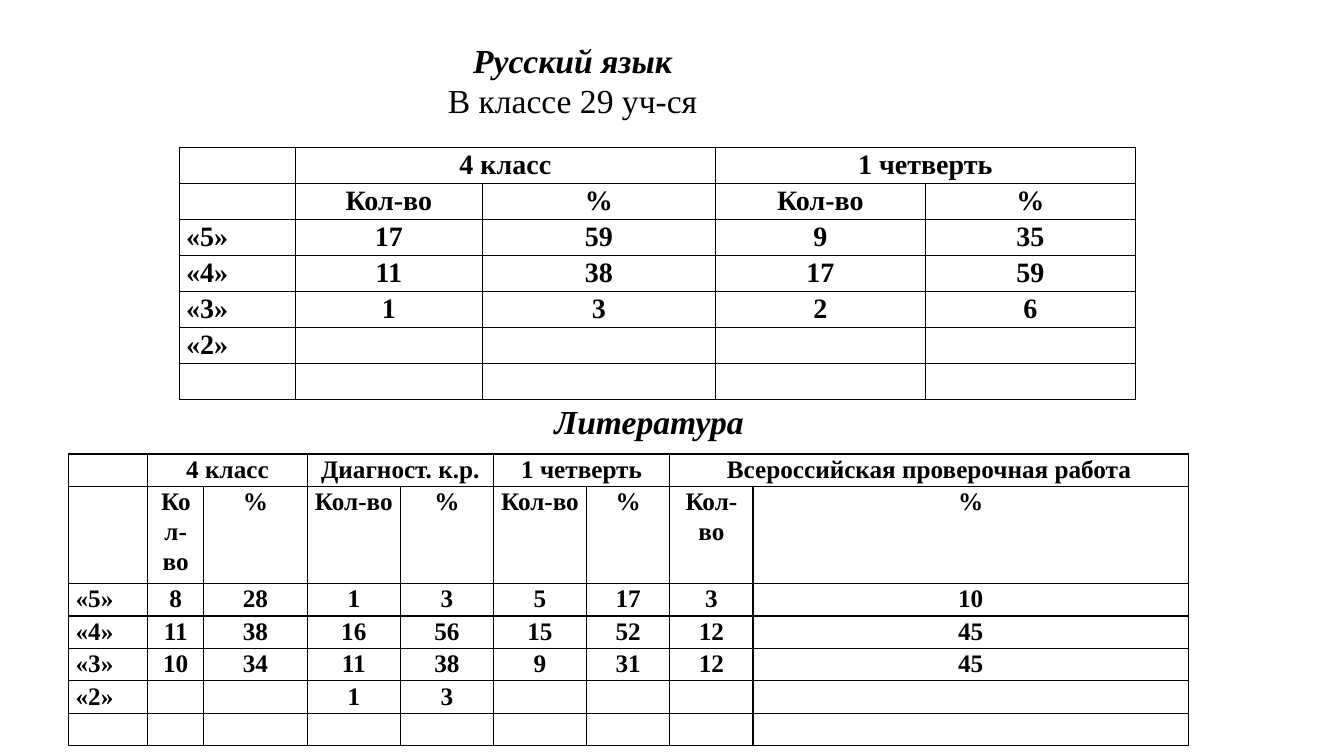
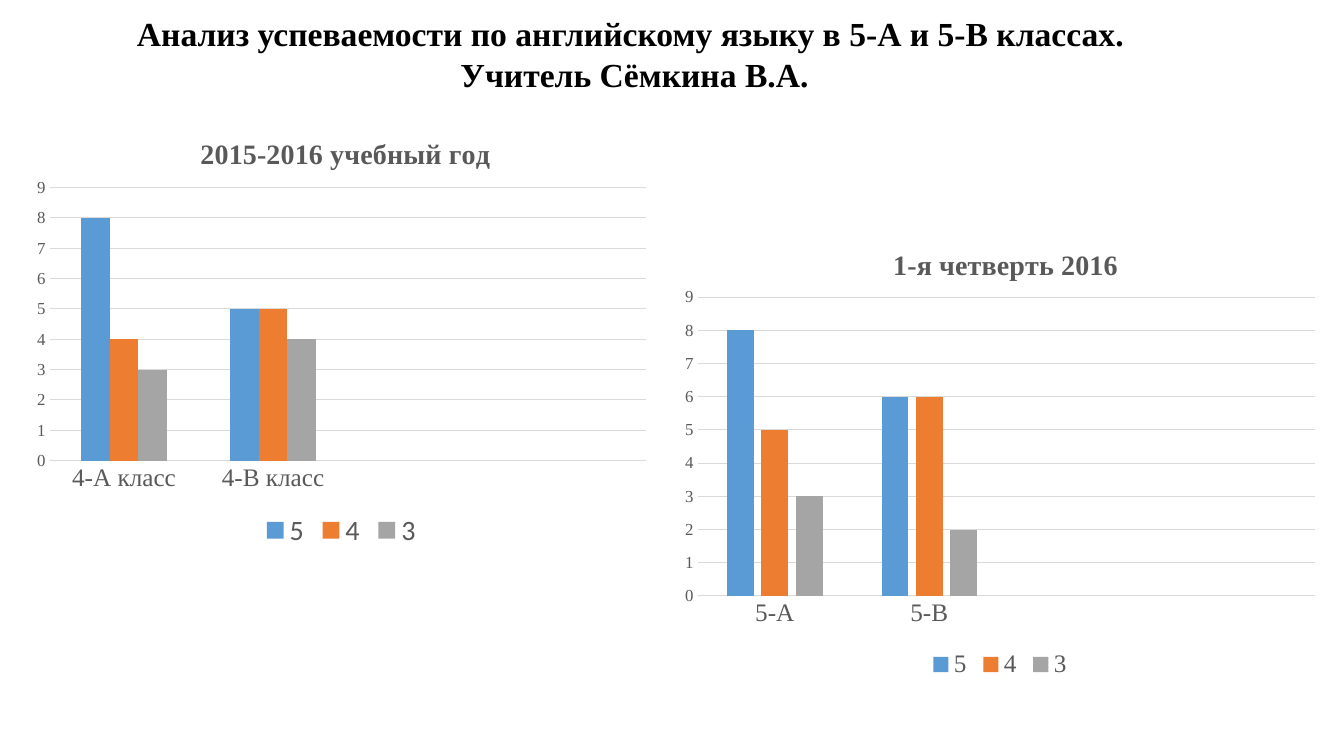
from lxml.etree import SubElement as Sub
from pptx import Presentation as Deck
from pptx.chart.data import CategoryChartData as Data
from pptx.dml.color import RGBColor as RGB
from pptx.enum.chart import XL_CHART_TYPE as Kind, XL_LEGEND_POSITION as Spot, XL_TICK_MARK as Tick
from pptx.enum.text import PP_ALIGN as Align
from pptx.oxml.ns import qn
from pptx.util import Pt

HUES = {"ink": "000000", "gray": "595959", "rule": "D9D9D9",
        "5": "5B9BD5", "4": "ED7D31", "3": "A5A5A5"}
SERIF, SANS = "Times New Roman", "Calibri"


class Page:
    def __init__(self, deck):
        self.deck = deck
        self.slide = None

    def new(self):
        self.slide = self.deck.slides.add_slide(self.deck.slide_layouts[6])

    def style(self, font, size, hue="ink", **more):
        looks = {"name": SERIF, "size": Pt(size), **more}
        for key, value in looks.items():
            setattr(font, key, value)
        font.color.rgb = RGB.from_string(HUES[hue])

    def rule(self, line):
        line.color.rgb = RGB.from_string(HUES["rule"])
        line.width = Pt(0.75)

    def text(self, box, lines, wrap=False):
        frame = self.slide.shapes.add_textbox(*map(Pt, box)).text_frame
        frame.word_wrap = wrap
        for i, (words, looks) in enumerate(lines):
            para = frame.add_paragraph() if i else frame.paragraphs[0]
            para.alignment = Align.CENTER
            run = para.add_run()
            run.text = words
            self.style(run.font, 24, **looks)

    def edge(self, cell):
        props = cell._tc.get_or_add_tcPr()
        for side in ("lnL", "lnR", "lnT", "lnB"):
            line = Sub(props, qn("a:" + side), w=str(Pt(1)))
            fill = Sub(line, qn("a:solidFill"))
            Sub(fill, qn("a:srgbClr"), val=HUES["ink"])
        cell.fill.background()

    def table(self, left, top, cols, tall, size, rows):
        box = (left, top, sum(cols), sum(tall))
        grid = self.slide.shapes.add_table(len(rows), len(cols), *map(Pt, box)).table
        grid.first_row = grid.horz_banding = False
        for col, width in zip(grid.columns, cols):
            col.width = Pt(width)
        for row, height in zip(grid.rows, tall):
            row.height = Pt(height)
        for r, row in enumerate(rows):
            for c in range(len(cols)):
                cell = grid.cell(r, c)
                pads = {"margin_left": 5, "margin_right": 5, "margin_top": 0, "margin_bottom": 0}
                for key, value in pads.items():
                    setattr(cell, key, Pt(value))
                self.edge(cell)
                if c < len(row) and row[c]:
                    para = cell.text_frame.paragraphs[0]
                    para.line_spacing = 1.07
                    para.alignment = Align.CENTER if c else Align.LEFT
                    run = para.add_run()
                    run.text = row[c]
                    self.style(run.font, size, bold=True)
        for c in range(1, len(cols), 2):
            grid.cell(0, c).merge(grid.cell(0, c + 1))

    def place(self, node, index, **spots):
        for old in node.findall(qn("c:layout")):
            node.remove(old)
        frame = node.makeelement(qn("c:layout"))
        node.insert(index, frame)
        form = Sub(frame, qn("c:manualLayout"))
        if "w" in spots:
            Sub(form, qn("c:layoutTarget"), val="inner")
        for key in "xy":
            Sub(form, qn(f"c:{key}Mode"), val="edge")
        for key, value in spots.items():
            Sub(form, qn("c:" + key), val=str(value))

    def chart(self, box, title, cats, marks, plot, head, lap, key):
        data = Data()
        data.categories = cats + ["", ""]
        for name, vals in marks.items():
            data.add_series(name, vals + [None, None])
        chart = self.slide.shapes.add_chart(Kind.COLUMN_CLUSTERED, *map(Pt, box), data).chart
        self.style(chart.font, 10, name=SANS)
        chart.has_title = True
        run = chart.chart_title.text_frame.paragraphs[0].add_run()
        run.text = title
        self.style(run.font, 20, "gray", bold=True)
        chart.chart_title.include_in_layout = False
        self.place(chart.chart_title._element, 1, **head)
        self.place(chart._chartSpace.chart.plotArea, 0, **plot)
        chart.has_legend = True
        chart.legend.position = Spot.BOTTOM
        chart.legend.include_in_layout = False
        self.style(chart.legend.font, hue="gray", **key)
        for axis, size in ((chart.category_axis, 18), (chart.value_axis, 12)):
            axis.major_tick_mark = axis.minor_tick_mark = Tick.NONE
            self.style(axis.tick_labels.font, size, "gray")
        self.rule(chart.category_axis.format.line)
        scale = chart.value_axis
        for name, value in {"minimum_scale": 0, "maximum_scale": 9, "major_unit": 1}.items():
            setattr(scale, name, value)
        scale.format.line.fill.background()
        self.rule(scale.major_gridlines.format.line)
        bars = chart.plots[0]
        for name, value in {"gap_width": 219, "overlap": lap, "vary_by_categories": False}.items():
            setattr(bars, name, value)
        for one in bars.series:
            one.format.fill.solid()
            one.format.fill.fore_color.rgb = RGB.from_string(HUES[one.name])


def main():
    deck = Deck()
    deck.slide_width, deck.slide_height = Pt(960), Pt(540)
    page = Page(deck)
    strong = {"bold": True}
    slant = {"bold": True, "italic": True}

    page.new()
    page.table(49, 324.3, [56.5, 40, 74, 66.5, 66.5, 66.5, 59.5, 59.5, 311],
               [23.2, 69.3] + [23.2] * 5, 18, [
        ["", "4 класс", "", "Диагност. к.р.", "", "1 четверть", "",
         "Всероссийская проверочная работа"],
        [""] + ["Кол-во", "%"] * 4,
        ["«5»", "8", "28", "1", "3", "5", "17", "3", "10"],
        ["«4»", "11", "38", "16", "56", "15", "52", "12", "45"],
        ["«3»", "10", "34", "11", "38", "9", "31", "12", "45"],
        ["«2»", "", "", "1", "3"],
        []])
    page.table(128, 105.5, [83, 133.5, 166.5, 150, 150], [25.7] * 7, 20, [
        ["", "4 класс", "", "1 четверть"],
        [""] + ["Кол-во", "%"] * 2,
        ["«5»", "17", "59", "9", "35"],
        ["«4»", "11", "38", "17", "59"],
        ["«3»", "1", "3", "2", "6"],
        ["«2»"],
        []])
    page.text((312, 25, 194, 63), [("Русский язык", slant), ("В классе 29 уч-ся", {})])
    page.text((388, 282.5, 151, 36), [("Литература", slant)])

    page.new()
    page.text((24.5, 6, 857.5, 65.5), [
        ("Анализ успеваемости по английскому языку в 5-А и 5-В классах. ", strong),
        ("Учитель Сёмкина В.А.", strong)], wrap=True)
    page.chart((17.3, 80.6, 453, 314.6), "2015-2016 учебный год", ["4-А класс", "4-В класс"],
               {"5": [8, 5], "4": [4, 5], "3": [3, 4]},
               {"x": 0.04, "y": 0.17, "w": 0.94, "h": 0.62}, {"x": 0.27, "y": 0.04},
               0, {"size": 20, "name": SANS})
    page.chart((479.5, 159.8, 469.5, 328.3), "1-я четверть 2016", ["5-А", "5-В"],
               {"5": [8, 6], "4": [5, 6], "3": [3, 2]},
               {"x": 0.04, "y": 0.16, "w": 0.94, "h": 0.65}, {"x": 0.33, "y": 0.04},
               -27, {"size": 18})
    deck.save("out.pptx")


if __name__ == "__main__":
    main()
